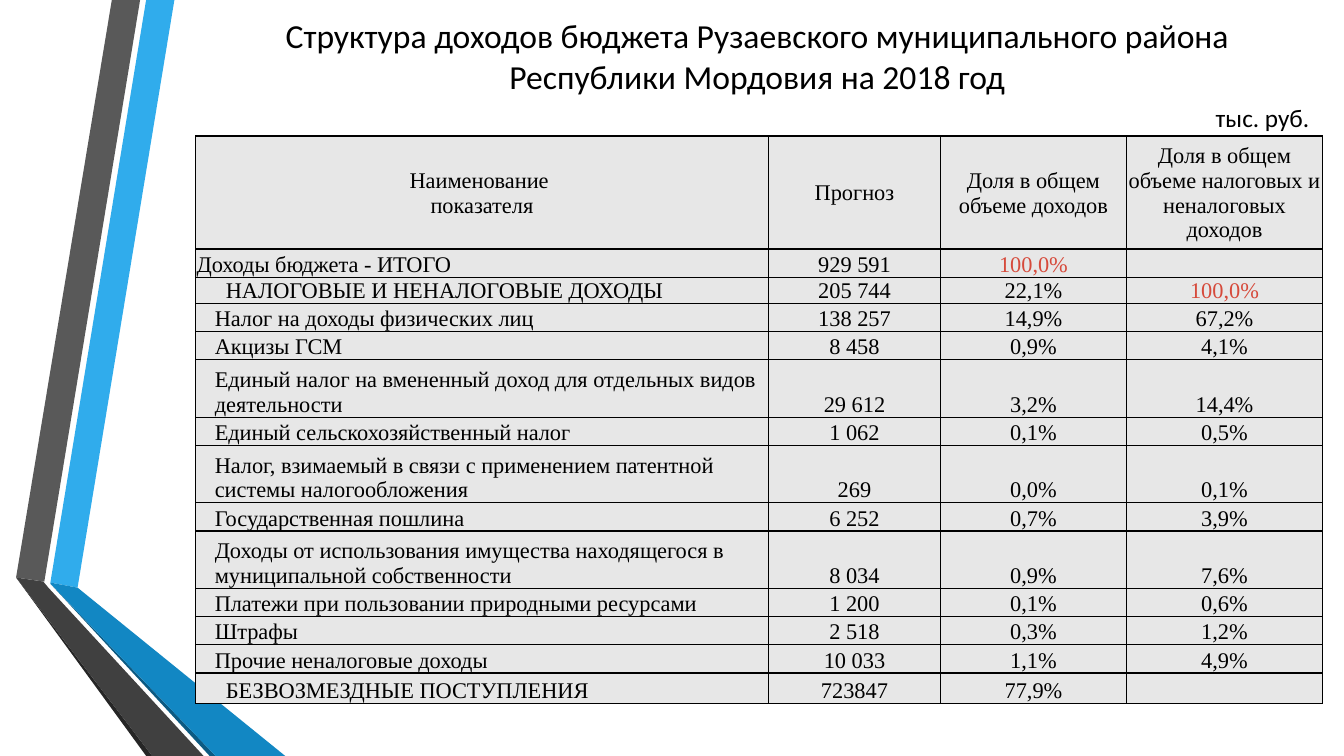
from lxml.etree import SubElement
from pptx import Presentation
from pptx.dml.color import RGBColor
from pptx.enum.text import MSO_ANCHOR, MSO_AUTO_SIZE, PP_ALIGN
from pptx.oxml.ns import qn
from pptx.util import Inches, Pt

BLACK = RGBColor(0x00, 0x00, 0x00)
RED = RGBColor(0xD6, 0x4A, 0x3B)
CELL_GRAY = RGBColor(0xE7, 0xE7, 0xE7)
SKY = RGBColor(0x30, 0xAC, 0xEC)
BLUE = RGBColor(0x12, 0x87, 0xC3)
NAVY = RGBColor(0x0C, 0x5A, 0x82)
GRAY = RGBColor(0x59, 0x59, 0x59)
DARK_GRAY = RGBColor(0x40, 0x40, 0x40)
CHARCOAL = RGBColor(0x26, 0x26, 0x26)

RIBBONS = [
    (SKY, [(0.5, 5.78), (0.77, 5.83), (1.73, 0), (1.45, 0)]),
    (GRAY, [(1.39, 0), (1.11, 0), (0.16, 5.73), (0.44, 5.77)]),
    (CHARCOAL, [(0.16, 5.73), (1.45, 7.5), (1.51, 7.5)]),
    (NAVY, [(0.5, 5.79), (2.08, 7.5), (2.14, 7.5)]),
    (BLUE, [(0.5, 5.78), (0.5, 5.79), (2.14, 7.5), (2.83, 7.5), (0.77, 5.83)]),
    (DARK_GRAY, [(2.02, 7.5), (0.48, 5.83), (0.43, 5.77), (0.16, 5.73), (1.51, 7.5)]),
]

COLUMN_WIDTHS = [5.68, 1.71, 1.84, 1.95]
HEADER_HEIGHT, LINE_HEIGHT, WRAPPED_HEIGHT = 1.12, 0.28, 0.57
TOTAL, ITEM, GROUP = 0.01, 0.19, 0.3
HEADER = ["Наименование \vпоказателя", "Прогноз", "Доля в общем объеме доходов",
          "Доля в общем объеме налоговых и неналоговых доходов"]
INCOME = [
    (TOTAL, LINE_HEIGHT, ["Доходы бюджета - ИТОГО", "929 591", "100,0%", ""]),
    (GROUP, 0.25, ["НАЛОГОВЫЕ И НЕНАЛОГОВЫЕ ДОХОДЫ", "205 744", "22,1%", "100,0%"]),
    (ITEM, LINE_HEIGHT, ["Налог на доходы физических лиц", "138 257", "14,9%", "67,2%"]),
    (ITEM, LINE_HEIGHT, ["Акцизы ГСМ", "8 458", "0,9%", "4,1%"]),
    (ITEM, WRAPPED_HEIGHT, ["Единый налог на вмененный доход для отдельных видов деятельности",
                            "29 612", "3,2%", "14,4%"]),
    (ITEM, LINE_HEIGHT, ["Единый сельскохозяйственный налог", "1 062", "0,1%", "0,5%"]),
    (ITEM, WRAPPED_HEIGHT, ["Налог, взимаемый в связи с применением патентной системы налогообложения",
                            "269", "0,0%", "0,1%"]),
    (ITEM, LINE_HEIGHT, ["Государственная пошлина", "6 252", "0,7%", "3,9%"]),
    (ITEM, WRAPPED_HEIGHT, ["Доходы от использования имущества находящегося в муниципальной собственности",
                            "8 034", "0,9%", "7,6%"]),
    (ITEM, LINE_HEIGHT, ["Платежи при пользовании природными ресурсами", "1 200", "0,1%", "0,6%"]),
    (ITEM, LINE_HEIGHT, ["Штрафы", "2 518", "0,3%", "1,2%"]),
    (ITEM, LINE_HEIGHT, ["Прочие неналоговые доходы", "10 033", "1,1%", "4,9%"]),
    (GROUP, 0.3, ["БЕЗВОЗМЕЗДНЫЕ ПОСТУПЛЕНИЯ", "723847", "77,9%", ""]),
]


def write_text(text_frame, text, *, font, size, color=BLACK, align=PP_ALIGN.LEFT):
    text_frame.text = text
    paragraph = text_frame.paragraphs[0]
    paragraph.alignment = align
    for run in paragraph.runs:
        run.font.name = font
        run.font.size = Pt(size)
        run.font.color.rgb = color
    if not text:
        SubElement(paragraph._p, qn("a:endParaRPr"), sz=str(size * 100))


class BudgetSlide:
    heading_font = "Calibri"
    table_font = "Times New Roman"
    table_size = 16

    def __init__(self, presentation):
        self.slide = presentation.slides.add_slide(presentation.slide_layouts[5])

    def ribbon(self, color, points):
        corners = [(Inches(x), Inches(y)) for x, y in points]
        builder = self.slide.shapes.build_freeform(*corners[0])
        builder.add_line_segments(corners[1:], close=True)
        shape = builder.convert_to_shape()
        shape.shadow.inherit = False
        shape.fill.solid()
        shape.fill.fore_color.rgb = color
        shape.line.fill.background()

    def title(self, text, left, top, width, height):
        shape = self.slide.shapes.title
        shape.left, shape.top = Inches(left), Inches(top)
        shape.width, shape.height = Inches(width), Inches(height)
        write_text(shape.text_frame, text, font=self.heading_font, size=24, align=PP_ALIGN.CENTER)
        shape.text_frame.vertical_anchor = MSO_ANCHOR.MIDDLE
        shape.text_frame.auto_size = MSO_AUTO_SIZE.NONE

    def label(self, text, left, top, width, height):
        shape = self.slide.shapes.add_textbox(Inches(left), Inches(top), Inches(width), Inches(height))
        write_text(shape.text_frame, text, font=self.heading_font, size=18)
        shape.text_frame.word_wrap = False

    def cell(self, cell, text, align, anchor, indent):
        color = RED if text == "100,0%" else BLACK
        write_text(cell.text_frame, text, font=self.table_font, size=self.table_size,
                   color=color, align=align)
        cell.vertical_anchor = anchor
        cell.margin_left = Inches(indent)
        cell.margin_right = cell.margin_top = Inches(0.01)
        cell.margin_bottom = 0
        properties = cell._tc.get_or_add_tcPr()
        for side in ("lnL", "lnR", "lnT", "lnB"):
            border = SubElement(properties, qn(f"a:{side}"), w=str(Pt(1)))
            fill = SubElement(border, qn("a:solidFill"))
            SubElement(fill, qn("a:srgbClr"), val=str(BLACK))
        cell.fill.solid()
        cell.fill.fore_color.rgb = CELL_GRAY

    def table(self, header, records, left, top):
        rows = [(TOTAL, HEADER_HEIGHT, header), *records]
        width = sum(COLUMN_WIDTHS)
        height = sum(row_height for _, row_height, _ in rows)
        table = self.slide.shapes.add_table(len(rows), len(header), Inches(left), Inches(top),
                                            Inches(width), Inches(height)).table
        table.first_row = table.horz_banding = False
        for column, column_width in zip(table.columns, COLUMN_WIDTHS):
            column.width = Inches(column_width)
        for row_index, (indent, row_height, texts) in enumerate(rows):
            table.rows[row_index].height = Inches(row_height)
            anchor = MSO_ANCHOR.BOTTOM if row_index else MSO_ANCHOR.MIDDLE
            for column_index, text in enumerate(texts):
                is_name = row_index > 0 and column_index == 0
                self.cell(table.cell(row_index, column_index), text,
                          PP_ALIGN.LEFT if is_name else PP_ALIGN.CENTER, anchor,
                          indent if is_name else 0.01)


def main():
    presentation = Presentation()
    presentation.slide_width, presentation.slide_height = Inches(13.33), Inches(7.5)
    budget = BudgetSlide(presentation)
    for color, points in RIBBONS:
        budget.ribbon(color, points)
    budget.title("Структура доходов бюджета Рузаевского муниципального района "
                 "Республики Мордовия на 2018 год", 1.89, 0.13, 11.24, 0.84)
    budget.table(HEADER, INCOME, 1.94, 1.35)
    budget.label("тыс. руб.", 11.96, 0.97, 1.16, 0.4)
    presentation.save("out.pptx")


if __name__ == "__main__":
    main()
